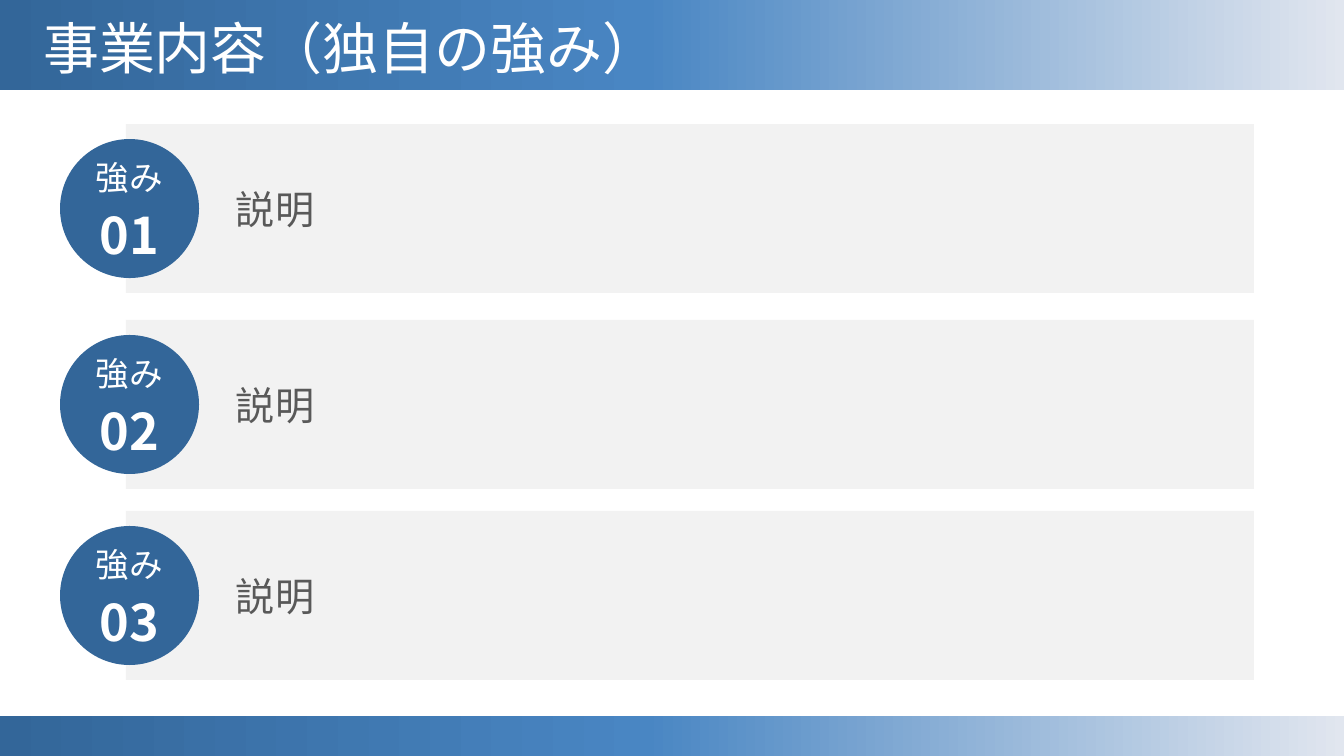
from copy import deepcopy

from lxml import etree
from pptx import Presentation
from pptx import util as u
from pptx.dml.color import RGBColor
from pptx.enum import shapes, text
from pptx.oxml.ns import qn

TITLE = "事業内容（独自の強み）"
LABEL = "強み"
# number, description, top of the row in px
STRENGTHS = [("01", "説明", 124), ("02", "説明", 320), ("03", "説明", 511)]

FONT = "Noto Sans CJK JP"
BLUE, GREY, DARK, WHITE = "336699", "F2F2F2", "595959", "FFFFFF"
GRADIENT = [(0, "336699"), (0.48, "4986C3"), (1, "E1E6EF")]

PX = 914400 / 100.8
WIDTH, HEIGHT = 1344, 756
BANDS = [(0, 90), (716, 40)]  # top, height
BAR_LEFT, BAR_WIDTH, BAR_HEIGHT = 126, 1128, 169
CIRCLE_LEFT, CIRCLE_SIZE = 60, 139
TEXT_LEFT, TEXT_WIDTH, TEXT_HEIGHT, TEXT_INDENT = 218, 975, 57, 18


def px(*lengths):
    return [u.Emu(round(length * PX)) for length in lengths]


def colour(value):
    return RGBColor.from_string(value)


def add_plain_shape(owner, kind, frame, fill=None):
    shape = owner.add_shape(kind, *px(*frame))
    shape.shadow.inherit = False
    shape.line.fill.background()
    if fill:
        shape.fill.solid()
        shape.fill.fore_color.rgb = colour(fill)
    return shape


def fill_gradient(shape):
    """Fill the shape from left to right with the GRADIENT stops."""
    shape.fill.gradient()
    shape.fill.gradient_angle = 0
    stop_list = shape._element.spPr.find(".//" + qn("a:gsLst"))
    stop_list.insert(1, deepcopy(stop_list[0]))
    for stop, (position, value) in zip(shape.fill.gradient_stops, GRADIENT):
        stop.position = position
        stop.color.rgb = colour(value)


def format_para(para, size, value, align, bold=False, spacing=None):
    para.alignment = align
    if spacing:
        para.line_spacing = spacing
    for span in para.runs:
        span.font.size = u.Pt(size)
        span.font.bold = bold
        span.font.name = FONT
        span.font.color.rgb = colour(value)
        east_asian = etree.Element(qn("a:ea"), typeface=FONT)
        span.font._element.find(qn("a:latin")).addnext(east_asian)


def add_bands(page):
    for top, height in BANDS:
        band = add_plain_shape(page.shapes, shapes.MSO_SHAPE.RECTANGLE,
                               (0, top, WIDTH, height))
        fill_gradient(band)
        page.shapes._spTree.insert(2, band._element)  # behind the title


def add_title(page):
    title = page.shapes.title
    title.left, title.top, title.width, title.height = px(33, 15, 1159, 73)
    frame = title.text_frame
    frame.text = TITLE
    frame.vertical_anchor = text.MSO_ANCHOR.MIDDLE
    frame.auto_size = text.MSO_AUTO_SIZE.SHAPE_TO_FIT_TEXT
    format_para(frame.paragraphs[0], 40, WHITE, text.PP_ALIGN.LEFT, spacing=0.9)


def add_strength(page, number, description, top):
    middle = top + BAR_HEIGHT / 2
    group = page.shapes.add_group_shape()
    add_plain_shape(group.shapes, shapes.MSO_SHAPE.RECTANGLE,
                    (BAR_LEFT, top, BAR_WIDTH, BAR_HEIGHT), GREY)
    circle = add_plain_shape(
        group.shapes, shapes.MSO_SHAPE.OVAL,
        (CIRCLE_LEFT, middle - CIRCLE_SIZE / 2, CIRCLE_SIZE, CIRCLE_SIZE), BLUE)
    frame = circle.text_frame
    frame.text = f"{LABEL}\n{number}"
    frame.vertical_anchor = text.MSO_ANCHOR.MIDDLE
    for para, size, bold in zip(frame.paragraphs, (24, 36), (False, True)):
        format_para(para, size, WHITE, text.PP_ALIGN.CENTER, bold, 1.12)

    box = page.shapes.add_textbox(
        *px(TEXT_LEFT, middle - TEXT_HEIGHT / 2, TEXT_WIDTH, TEXT_HEIGHT))
    frame = box.text_frame
    frame.word_wrap = True
    frame.auto_size = text.MSO_AUTO_SIZE.SHAPE_TO_FIT_TEXT
    frame.margin_left = px(TEXT_INDENT)[0]
    frame.text = description
    format_para(frame.paragraphs[0], 28, DARK, text.PP_ALIGN.LEFT)


def main():
    deck = Presentation()
    deck.slide_width, deck.slide_height = px(WIDTH, HEIGHT)
    page = deck.slides.add_slide(deck.slide_layouts[5])
    add_bands(page)
    add_title(page)
    for strength in STRENGTHS:
        add_strength(page, *strength)
    deck.save("out.pptx")


if __name__ == "__main__":
    main()
